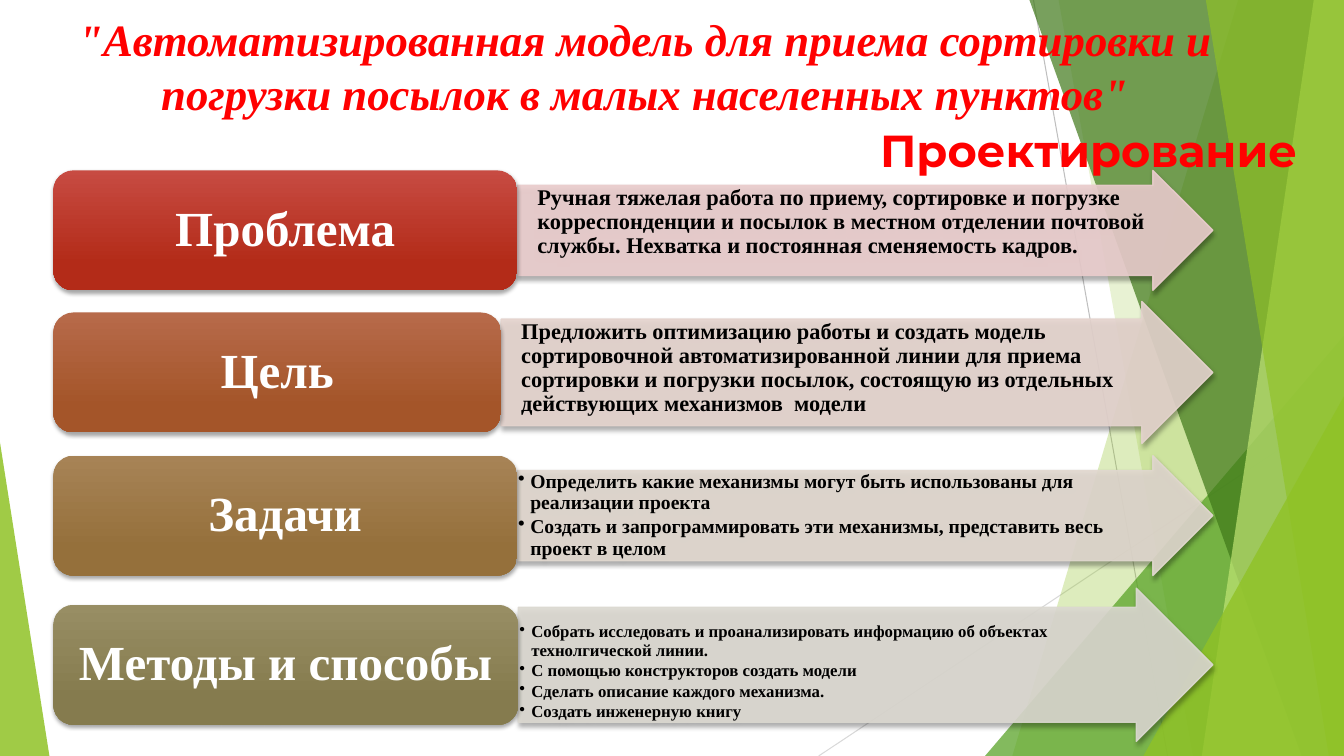
from dataclasses import dataclass

from lxml import etree
from pptx import Presentation
from pptx.dml.color import RGBColor
from pptx.enum.shapes import MSO_CONNECTOR, MSO_SHAPE
from pptx.enum.text import MSO_ANCHOR, MSO_AUTO_SIZE, PP_ALIGN
from pptx.oxml.ns import qn
from pptx.shapes.autoshape import Shape
from pptx.slide import Slide
from pptx.text.text import TextFrame
from pptx.util import Inches, Pt

ROUNDED = MSO_SHAPE.ROUNDED_RECTANGLE
ARROW = MSO_SHAPE.RIGHT_ARROW
TRIANGLE = MSO_SHAPE.ISOSCELES_TRIANGLE
STRAIGHT = MSO_CONNECTOR.STRAIGHT
TOP, MIDDLE = MSO_ANCHOR.TOP, MSO_ANCHOR.MIDDLE
NO_AUTOFIT = MSO_AUTO_SIZE.NONE
LEFT, CENTER, RIGHT = PP_ALIGN.LEFT, PP_ALIGN.CENTER, PP_ALIGN.RIGHT

SLIDE_WIDTH, SLIDE_HEIGHT = 13.33, 7.5
LABEL_LEFT, LABEL_HEIGHT = 0.53, 1.19
ARROW_RIGHT = 12.03


@dataclass(frozen=True)
class Theme:
    body_font: str = "Times New Roman"
    title_font: str = "Montserrat"
    heading: str = "FF0000"
    label_text: str = "FFFFFF"
    body_text: str = "000000"
    shadow: str = "000000"
    lime: str = "90C226"
    pale_lime: str = "C0E474"
    green: str = "54A021"
    dark_green: str = "3F7819"
    heading_size: float = 32
    label_size: float = 35


THEME = Theme()


@dataclass(frozen=True)
class Band:
    """A slanted area that reaches from its left edge to the slide's right side."""
    top_x: float
    bottom_x: float
    color: str
    opacity: int


@dataclass(frozen=True)
class Wedge:
    """A right-angled triangle standing on the slide's bottom edge."""
    left: float
    top: float
    width: float
    apex: float
    color: str
    opacity: int


@dataclass(frozen=True)
class Hairline:
    start: tuple[float, float]
    end: tuple[float, float]
    color: str


@dataclass(frozen=True)
class Row:
    label: str
    top: float
    label_width: float
    arrow_height: float
    gradient: tuple[str, str]
    arrow_color: str
    text_size: float
    texts: tuple[str, ...]
    bulleted: bool = False
    top_inset: float = 0.01


HAIRLINES = (
    Hairline((10.25, 0), (11.58, 7.5), "BFBFBF"),
    Hairline((13.33, 4.03), (8.12, 7.5), "D9D9D9"),
)
FACETS = (
    Band(12.28, 10.04, THEME.lime, 30),
    Band(10.5, 11.83, THEME.lime, 20),
    Wedge(9.77, 3.33, 3.56, 1, THEME.green, 72),
    Band(10.21, 12.91, THEME.dark_green, 70),
    Band(13.03, 11.92, THEME.pale_lime, 70),
    Band(11.96, 13.18, THEME.lime, 65),
    Wedge(11.34, 3.93, 1.99, 1, THEME.lime, 80),
    Wedge(0, 4.39, 0.49, 0, THEME.lime, 85),
)
ROWS = (
    Row("Проблема", 1.69, 4.6, 1.19, ("C74B42", "B32B18"), "EACDCD", 16, (
        "Ручная тяжелая работа по приему, сортировке и погрузке корреспонденции и посылок "
        "в местном отделении почтовой службы. Нехватка и постоянная сменяемость кадров.",)),
    Row("Цель", 3.1, 4.44, 1.41, ("B76A4A", "A45529"), "E5D4CE", 16, (
        "Предложить оптимизацию работы и создать модель сортировочной автоматизированной "
        "линии для приема сортировки и погрузки посылок, состоящую из отдельных "
        "действующих механизмов  модели",)),
    Row("Задачи", 4.52, 4.6, 1.19, ("A78356", "95703B"), "E1D8CF", 14, (
        "Определить какие механизмы могут быть использованы для реализации проекта",
        "Создать и запрограммировать эти механизмы, представить весь проект в целом",
    ), bulleted=True),
    Row("Методы и способы", 6, 4.61, 1.52, ("988E64", "857B4E"), "DCD9D1", 12, (
        "Собрать исследовать и проанализировать информацию об объектах технолгической линии.",
        "С помощью конструкторов создать модели",
        "Сделать описание каждого механизма.",
        "Создать инженерную книгу",
    ), bulleted=True, top_inset=0.16),
)


def paint(shape: Shape, color: str) -> None:
    shape.shadow.inherit = False
    shape.fill.solid()
    shape.fill.fore_color.rgb = RGBColor.from_string(color)
    shape.line.fill.background()


def set_opacity(shape: Shape, percent: int) -> None:
    for color in shape.element.spPr.iter(qn("a:srgbClr")):
        etree.SubElement(color, qn("a:alpha"), val=str(percent * 1000))


def add_shadow(shape: Shape) -> None:
    effects = shape.element.spPr.find(qn("a:effectLst"))
    shadow = etree.SubElement(effects, qn("a:outerShdw"), blurRad=str(Pt(3)),
                              dist=str(Pt(2)), dir="5400000", rotWithShape="0")
    color = etree.SubElement(shadow, qn("a:srgbClr"), val=THEME.shadow)
    etree.SubElement(color, qn("a:alpha"), val="35000")


def set_frame(frame: TextFrame, anchor: MSO_ANCHOR,
              insets: tuple[float, float, float, float]) -> None:
    frame.word_wrap = True
    frame.auto_size = NO_AUTOFIT
    frame.vertical_anchor = anchor
    (frame.margin_left, frame.margin_top,
     frame.margin_right, frame.margin_bottom) = map(Inches, insets)


def write(frame: TextFrame, texts: tuple[str, ...], font: str, size: float, color: str,
          align: PP_ALIGN, spacing: float = 1, after: float = 0, italic: bool = False) -> None:
    for index, text in enumerate(texts):
        paragraph = frame.add_paragraph() if index else frame.paragraphs[0]
        paragraph.alignment = align
        paragraph.line_spacing = spacing
        paragraph.space_before = Pt(0)
        paragraph.space_after = Pt(after)
        run = paragraph.add_run()
        run.text = text
        run.font.name, run.font.size = font, Pt(size)
        run.font.bold, run.font.italic = True, italic
        run.font.color.rgb = RGBColor.from_string(color)


def indent(frame: TextFrame, bulleted: bool) -> None:
    for paragraph in frame.paragraphs:
        properties = paragraph._p.get_or_add_pPr()
        properties.set("marL", str(Inches(0.12 if bulleted else 0.19)))
        if bulleted:
            properties.set("indent", str(-Inches(0.12)))
            etree.SubElement(properties, qn("a:buChar"), char="•")


def add_hairline(slide: Slide, hairline: Hairline) -> None:
    ends = map(Inches, hairline.start + hairline.end)
    connector = slide.shapes.add_connector(STRAIGHT, *ends)
    connector.line.color.rgb = RGBColor.from_string(hairline.color)
    connector.line.width = Pt(0.75)
    etree.SubElement(connector.element.spPr, qn("a:effectLst"))


def add_facet(slide: Slide, facet: Band | Wedge) -> None:
    if isinstance(facet, Band):
        right, bottom = Inches(SLIDE_WIDTH), Inches(SLIDE_HEIGHT)
        builder = slide.shapes.build_freeform(Inches(facet.top_x), 0)
        builder.add_line_segments(
            [(right, 0), (right, bottom), (Inches(facet.bottom_x), bottom)], close=True)
        shape = builder.convert_to_shape()
    else:
        shape = slide.shapes.add_shape(TRIANGLE, Inches(facet.left), Inches(facet.top),
                                       Inches(facet.width), Inches(SLIDE_HEIGHT - facet.top))
        shape.adjustments[0] = facet.apex
    paint(shape, facet.color)
    set_opacity(shape, facet.opacity)


def add_arrow(slide: Slide, row: Row) -> None:
    left = LABEL_LEFT + row.label_width
    top = row.top + (LABEL_HEIGHT - row.arrow_height) / 2
    arrow = slide.shapes.add_shape(ARROW, Inches(left), Inches(top),
                                   Inches(ARROW_RIGHT - left), Inches(row.arrow_height))
    arrow.adjustments[0], arrow.adjustments[1] = 0.75, 0.5
    paint(arrow, row.arrow_color)
    arrow.line.color.rgb = RGBColor.from_string(row.arrow_color)
    arrow.line.width = Pt(1)
    set_opacity(arrow, 90)
    add_shadow(arrow)
    frame = arrow.text_frame
    set_frame(frame, TOP, (0.01, row.top_inset, 0.01, 0.01))
    write(frame, row.texts, THEME.body_font, row.text_size, THEME.body_text, LEFT,
          spacing=0.9, after=row.text_size * 0.15)
    indent(frame, row.bulleted)


def add_label(slide: Slide, row: Row) -> None:
    label = slide.shapes.add_shape(ROUNDED, Inches(LABEL_LEFT), Inches(row.top),
                                   Inches(row.label_width), Inches(LABEL_HEIGHT))
    paint(label, row.gradient[0])
    label.fill.gradient()
    label.fill.gradient_angle = 270
    for stop, color, position in zip(label.fill.gradient_stops, row.gradient, (0, 0.78)):
        stop.color.rgb = RGBColor.from_string(color)
        stop.position = position
    add_shadow(label)
    set_frame(label.text_frame, MIDDLE, (0.15, 0.07, 0.15, 0.07))
    write(label.text_frame, (row.label,), THEME.body_font, THEME.label_size,
          THEME.label_text, CENTER, spacing=0.9)


def place_title(slide: Slide) -> None:
    """Moves the title in front of the background facets and fills it."""
    title = slide.shapes.title
    slide.shapes.element.append(title.element)
    title.left, title.top, title.width, title.height = map(Inches, (5.04, 1.17, 7.93, 0.46))
    set_frame(title.text_frame, TOP, (0.1, 0.05, 0.1, 0.05))
    write(title.text_frame, ("Проектирование",), THEME.title_font, THEME.heading_size,
          THEME.heading, RIGHT)


def add_project_name(slide: Slide) -> None:
    box = slide.shapes.add_textbox(*map(Inches, (0.37, 0.07, 12.06, 1.18)))
    set_frame(box.text_frame, TOP, (0.1, 0.05, 0.1, 0.05))
    name = ('"Автоматизированная модель для приема сортировки и погрузки посылок '
            'в малых населенных пунктов"')
    write(box.text_frame, (name,), THEME.body_font, THEME.heading_size, THEME.heading,
          CENTER, italic=True)


def main() -> None:
    presentation = Presentation()
    presentation.slide_width = Inches(SLIDE_WIDTH)
    presentation.slide_height = Inches(SLIDE_HEIGHT)
    slide = presentation.slides.add_slide(presentation.slide_layouts[5])
    for hairline in HAIRLINES:
        add_hairline(slide, hairline)
    for facet in FACETS:
        add_facet(slide, facet)
    place_title(slide)
    for row in ROWS:
        add_arrow(slide, row)
        add_label(slide, row)
    add_project_name(slide)
    presentation.save("out.pptx")


if __name__ == "__main__":
    main()
